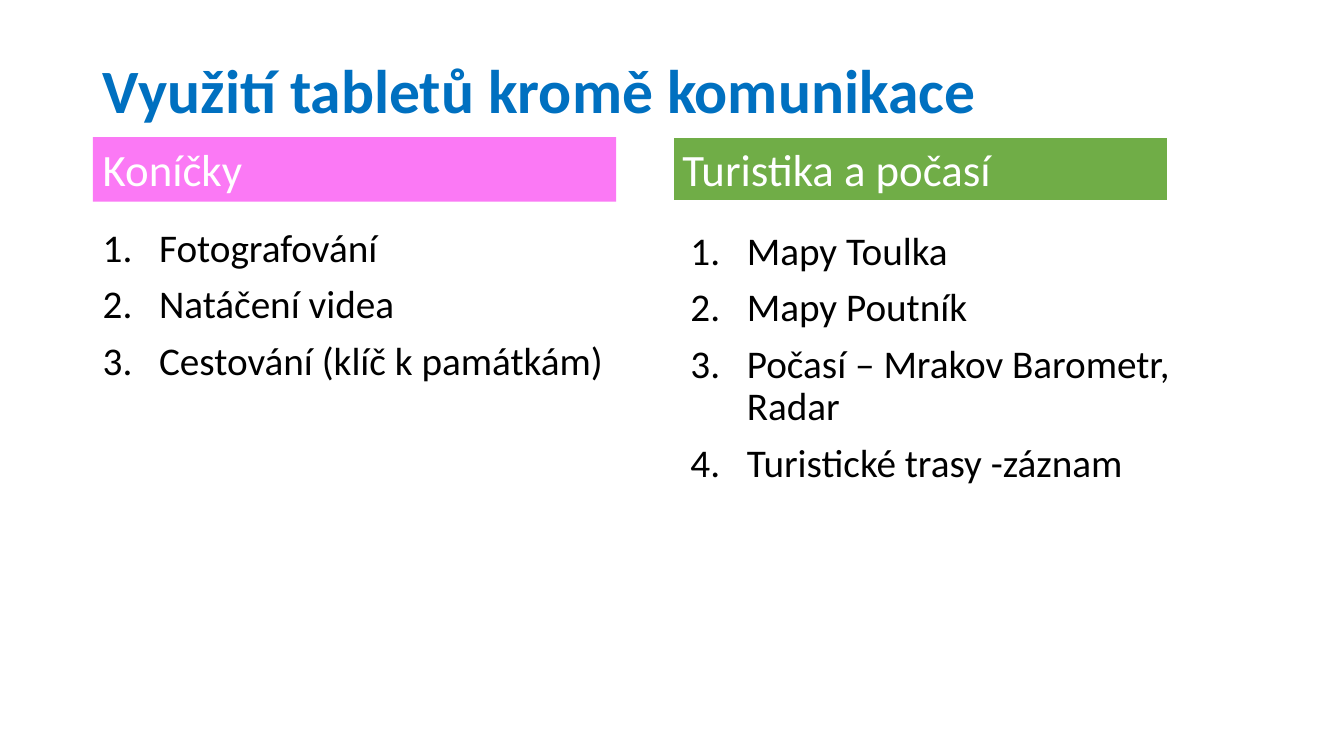
from lxml import etree
from pptx import Presentation
from pptx.dml.color import RGBColor
from pptx.enum.shapes import MSO_SHAPE
from pptx.enum.text import MSO_ANCHOR, MSO_AUTO_SIZE, PP_ALIGN
from pptx.oxml.ns import qn
from pptx.util import Inches, Pt

COLORS = {"title": "0070C0", "text": "000000", "white": "FFFFFF",
          "hobbies": "FB79F5", "tourism": "70AD47"}


def write(tf, lines, size, color, bold=False, numbered=False, spacing=None,
          anchor=MSO_ANCHOR.TOP):
    """Fill a text frame with one paragraph per line."""
    tf.word_wrap = True
    tf.auto_size = MSO_AUTO_SIZE.NONE
    tf.vertical_anchor = anchor
    for i, line in enumerate(lines):
        p = tf.paragraphs[0] if i == 0 else tf.add_paragraph()
        p.alignment = PP_ALIGN.LEFT
        p.line_spacing = spacing
        p.space_before = Pt(10 if i else 0)
        if numbered:
            pPr = p._p.get_or_add_pPr()
            pPr.set("marL", str(Inches(0.56)))
            pPr.set("indent", str(-Inches(0.56)))
            etree.SubElement(pPr, qn("a:buFont"), typeface="+mj-lt")
            etree.SubElement(pPr, qn("a:buAutoNum"), type="arabicPeriod")
        r = p.add_run()
        r.text = line
        r.font.name = "Calibri"
        r.font.size = Pt(size)
        r.font.bold = bold
        r.font.color.rgb = RGBColor.from_string(COLORS[color])


prs = Presentation()
prs.slide_width, prs.slide_height = Inches(13.33), Inches(7.5)
s = prs.slides.add_slide(prs.slide_layouts[5])

title = s.shapes.title
title.left, title.top = Inches(0.92), Inches(0.4)
title.width, title.height = Inches(10.67), Inches(1.05)
write(title.text_frame, ["Využití tabletů kromě komunikace"], 44, "title",
      bold=True, spacing=0.9, anchor=MSO_ANCHOR.MIDDLE)

# heading, colour, outlined, heading left and width, list left, top and width, items
columns = [
    ("Koníčky", "hobbies", False, 0.92, 5.19, 0.92, 2.22, 5.19,
     ["Fotografování", "Natáčení videa", "Cestování (klíč k památkám)"]),
    ("Turistika a počasí", "tourism", True, 6.67, 4.92, 6.75, 2.25, 5.67,
     ["Mapy Toulka", "Mapy Poutník", "Počasí – Mrakov Barometr, Radar",
      "Turistické trasy -záznam"]),
]
for (heading, color, outlined, left, width,
     list_left, list_top, list_width, items) in columns:
    box = s.shapes.add_textbox(Inches(list_left), Inches(list_top),
                               Inches(list_width), Inches(4.76))
    write(box.text_frame, items, 28, "text", numbered=True, spacing=0.9)

    bar = s.shapes.add_shape(MSO_SHAPE.RECTANGLE, Inches(left), Inches(1.36),
                             Inches(width), Inches(0.64))
    bar.shadow.inherit = False
    bar.fill.solid()
    bar.fill.fore_color.rgb = RGBColor.from_string(COLORS[color])
    if outlined:
        bar.line.color.rgb = RGBColor.from_string(COLORS["white"])
        bar.line.width = Pt(1.5)
    else:
        bar.line.fill.background()
    write(bar.text_frame, [heading], 32, "white")

prs.save("out.pptx")
